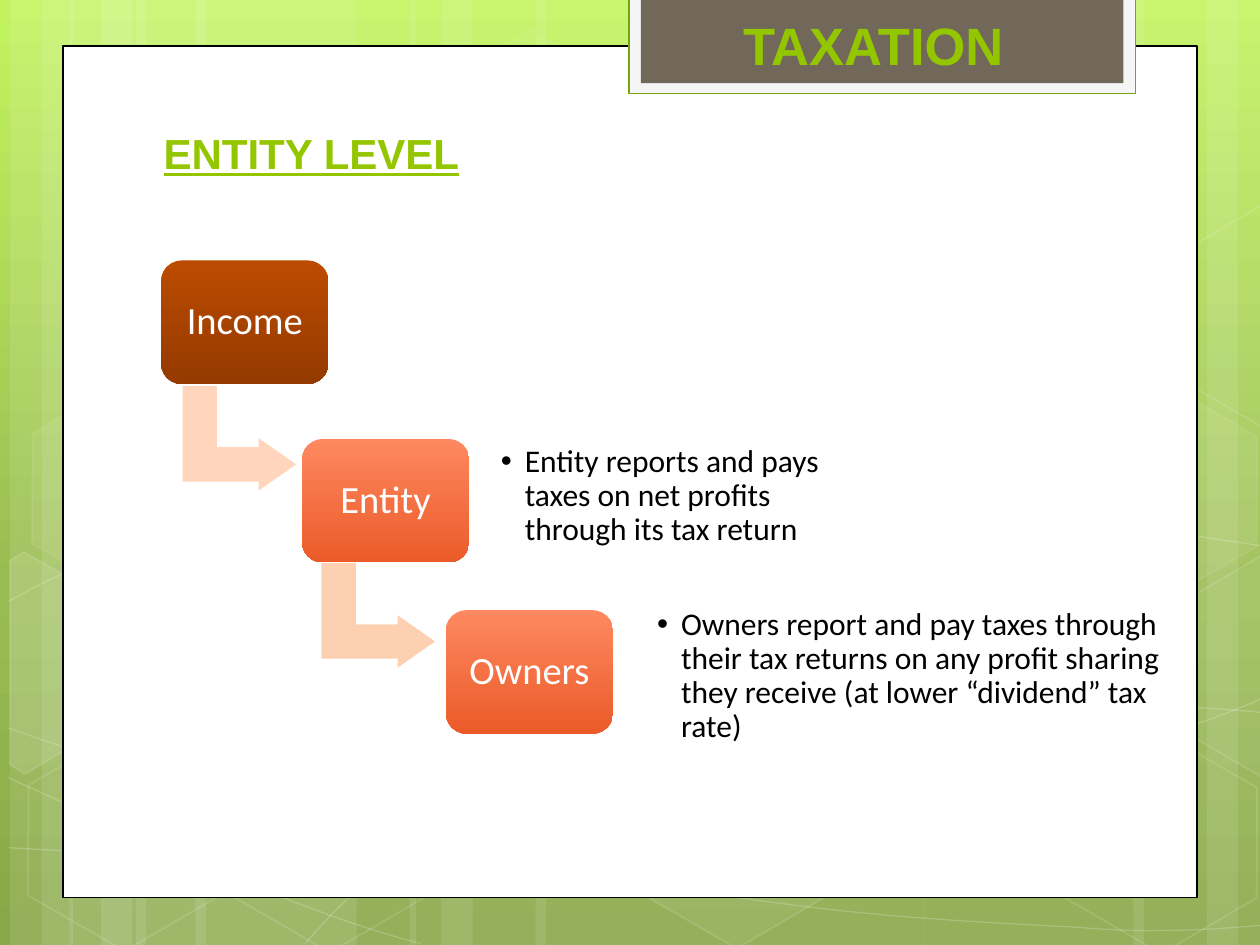
from copy import deepcopy
from math import cos, radians, sin

from lxml.etree import SubElement
from pptx import Presentation
from pptx.dml.color import RGBColor
from pptx.enum.shapes import MSO_SHAPE
from pptx.enum.text import MSO_ANCHOR, PP_ALIGN
from pptx.oxml.ns import qn
from pptx.util import Cm, Pt

WHITE = RGBColor(0xFF, 0xFF, 0xFF)
BLACK = RGBColor(0x00, 0x00, 0x00)
LIME = RGBColor(0x94, 0xC6, 0x00)
TAB_EDGE = RGBColor(0x74, 0xA5, 0x0F)
TAB_PALE = RGBColor(0xF5, 0xF5, 0xF5)
TAB_BROWN = RGBColor(0x71, 0x68, 0x5A)
PEACH = RGBColor(0xFF, 0xD6, 0xBB)
APRICOT = RGBColor(0xFE, 0xD0, 0xB2)
BACKDROP = [(0, RGBColor(0xC2, 0xF3, 0x5E)), (0.62, RGBColor(0x99, 0xBC, 0x52)),
            (1, RGBColor(0x88, 0xA8, 0x48))]
RUST = [(0, RGBColor(0xBB, 0x4B, 0x00)), (1, RGBColor(0x95, 0x3A, 0x00))]
ORANGE = [(0, RGBColor(0xFE, 0x88, 0x60)), (1, RGBColor(0xEB, 0x5B, 0x29))]

WIDTH, HEIGHT = 25.4, 19.05
TILT = 30
STRIPE_CLUSTERS = [(0.2, 1, 4.45), (1.4, 1, 4.45), (25.6, -1, 4.45), (8.26, 1, 7.82)]
CURVES = [
    [(0.18, 17.09), (1.55, 17.17), (2.92, 17.25), (4.83, 17.22), (6.73, 17.2),
     (9.09, 17.15), (11.63, 16.89), (14.17, 16.64), (17.78, 16.15), (20.12, 15.67),
     (22.43, 15.19), (24.82, 14.43), (25.58, 14)],
    [(0.18, 12.12), (0.91, 11.71), (1.65, 11.33), (3.07, 10.95), (4.52, 10.57),
     (6.58, 10.01), (8.81, 9.83), (11.07, 9.65), (13.82, 9.63), (16.61, 9.83),
     (19.41, 10.03), (24.05, 10.82), (25.58, 11.02)],
    [(0.15, 15.67), (3.23, 17.07), (6.27, 18.47), (8.48, 19.02)],
    [(0.18, 14.68), (0.97, 14.96), (1.78, 15.24), (3.25, 15.65), (4.72, 16.03),
     (6.93, 16.66), (9.07, 17.09), (11.18, 17.53), (13.84, 17.98), (15.95, 18.24),
     (18.06, 18.52), (20.32, 18.62), (21.67, 18.69), (22.99, 18.8), (23.34, 18.75),
     (24, 18.75), (24.66, 18.72), (25.12, 18.68), (25.58, 18.64)],
    [(6.15, 19.02), (6.6, 18.52), (7.06, 18.01), (7.67, 17.55), (8.28, 17.09),
     (9.14, 16.59), (9.86, 16.23), (10.57, 15.88), (11, 15.72), (11.94, 15.47),
     (12.85, 15.21), (14.55, 14.86), (15.44, 14.68), (16.36, 14.5), (16.48, 14.5),
     (17.27, 14.45), (18.06, 14.38), (19.3, 14.3), (20.17, 14.27), (21.06, 14.25),
     (22.5, 14.27), (22.5, 14.27), (23.07, 14.27), (23.64, 14.27), (24.21, 14.27),
     (24.66, 14.3), (25.1, 14.33), (25.32, 14.35), (25.55, 14.38), (25.48, 14.35),
     (25.55, 14.38)],
]
HEXAGONS = [(8.48, 0.91, 4, 8), (12.62, 14.96, 6, 12), (0.28, 15.01, 0, 12),
            (0.36, 7.92, 7, 8), (4.42, 15.04, 0, 12), (19.13, 11.51, 10, 12),
            (21.18, 15.06, 0, 12), (21.18, 7.98, 7, 8)]
LEFT_CUT = [(0.2, 11.3), (0.48, 11.13), (2.44, 12.24), (2.41, 14.48), (0.51, 15.6), (0.2, 15.42)]
RIGHT_CUT = [(23.52, 5.26), (25.43, 4.14), (25.64, 4.27), (25.63, 8.51), (25.45, 8.61), (23.52, 7.49)]
CUT_HEXAGONS = [(LEFT_CUT, 0, 10), (RIGHT_CUT, 7.06, 4), (RIGHT_CUT, 0, 0)]
PANELS = [((1.27, 0.93, 22.86, 17.17), WHITE, BLACK),
          ((12.68, -0.05, 10.21, 1.93), TAB_PALE, TAB_EDGE),
          ((12.92, -0.05, 9.73, 1.73), TAB_BROWN, None)]

HEADINGS = [
    ("TAXATION", (14.73, 0.25, 8.86, 1.42), 0.13, MSO_ANCHOR.BOTTOM,
     {"size": Pt(30), "name": "Arial", "bold": True}),
    ("ENTITY LEVEL", (3.05, 1.88, 8.33, 2.41), 0.25, MSO_ANCHOR.MIDDLE,
     {"size": Pt(24), "name": "Arial", "bold": True, "underline": True}),
]
STEPS = [
    {"name": "Income", "at": (3.25, 5.25), "fill": RUST, "arrow": ((3.77, 7.69), PEACH)},
    {"name": "Entity", "at": (6.09, 8.85), "fill": ORANGE, "arrow": ((6.57, 11.26), APRICOT),
     "note": ("Entity reports and pays taxes on net profits through its tax return",
              (9.92, 8, 7.34, 4.01))},
    {"name": "Owners", "at": (8.99, 12.3), "fill": ORANGE,
     "note": ("Owners report and pay taxes through their tax returns on any profit sharing "
              "they receive (at lower “dividend” tax rate)", (13.07, 10.87, 10.54, 5.54))},
]
STEP_SIZE = (3.37, 2.49)
ARROW_SIZE = (2.11, 2.29)
STEP_FONT = {"size": Pt(22), "name": "Calibri"}
NOTE_FONT = {"size": Pt(18), "name": "Calibri"}


def paint(shape, fill=None, line=None, fill_opacity=100, line_opacity=100, width=0.75):
    shape.shadow.inherit = False
    for target, color, opacity in ((shape.fill, fill, fill_opacity),
                                   (shape.line.fill, line, line_opacity)):
        if color is None or opacity == 0:
            target.background()
            continue
        target.solid()
        target.fore_color.rgb = color
        if opacity < 100:
            solid = target._xPr.find(qn("a:solidFill"))
            SubElement(solid[0], qn("a:alpha"), val=str(opacity * 1000))
    if line is not None:
        shape.line.width = Pt(width)


def paint_gradient(fill, stops):
    fill.gradient()
    fill.gradient_angle = 270
    stop_list = fill._xPr.find(qn("a:gradFill")).find(qn("a:gsLst"))
    while len(stop_list) < len(stops):
        stop_list.append(deepcopy(stop_list[0]))
    for stop, (position, color) in zip(fill.gradient_stops, stops):
        stop.position = position
        stop.color.rgb = color


def add_preset(slide, kind, frame, rotation=0, adjustments=()):
    shape = slide.shapes.add_shape(kind, *map(Cm, frame))
    shape.rotation = rotation
    for index, value in enumerate(adjustments):
        shape.adjustments[index] = value
    return shape


def add_outline(slide, points, close):
    scaled = [(Cm(x), Cm(y)) for x, y in points]
    builder = slide.shapes.build_freeform(*scaled[0])
    builder.add_line_segments(scaled[1:], close=close)
    return builder.convert_to_shape()


def add_curve(slide, points):
    shape = add_outline(slide, points, False)
    lines = list(shape._element.iter(qn("a:lnTo")))
    outline = lines[0].getparent()
    for start in range(0, len(lines), 3):
        curve = SubElement(outline, qn("a:cubicBezTo"))
        for line in lines[start:start + 3]:
            curve.append(line[0])
            outline.remove(line)
    return shape


def turn(point, degrees):
    x, y = point
    cosine, sine = cos(radians(degrees)), sin(radians(degrees))
    return x * cosine - y * sine, x * sine + y * cosine


def add_tilted_outline(slide, points):
    level = [turn(point, -TILT) for point in points]
    center = tuple((min(values) + max(values)) / 2 for values in zip(*level))
    shift_x, shift_y = (new - old for new, old in zip(turn(center, TILT), center))
    shape = add_outline(slide, [(x + shift_x, y + shift_y) for x, y in level], True)
    shape.rotation = TILT
    return shape


def write(box, text, font, color, margin, anchor=MSO_ANCHOR.MIDDLE, side=None, paragraph=None):
    frame = box.text_frame
    layout = {"word_wrap": True, "vertical_anchor": anchor,
              "margin_top": Cm(margin), "margin_bottom": Cm(margin),
              "margin_left": Cm(side or margin), "margin_right": Cm(side or margin)}
    para = frame.paragraphs[0]
    span = para.add_run()
    span.text = text
    span.font.color.rgb = color
    for target, values in ((frame, layout), (para, paragraph or {}), (span.font, font)):
        for name, value in values.items():
            setattr(target, name, value)
    return para


def add_note(slide, text, frame):
    box = slide.shapes.add_textbox(*map(Cm, frame))
    para = write(box, text, NOTE_FONT, BLACK, 0.18,
                 paragraph={"line_spacing": 0.9, "space_after": Pt(2.7)})
    properties = para._p.get_or_add_pPr()
    properties.set("marL", str(Cm(0.48)))
    properties.set("indent", str(-Cm(0.48)))
    SubElement(properties, qn("a:buFont"), typeface="Arial")
    SubElement(properties, qn("a:buChar"), char="•")


def add_backdrop(slide):
    paint_gradient(slide.background.fill, BACKDROP)
    for origin, direction, wide in STRIPE_CLUSTERS:
        for offset, width in ((2.54, wide), (0, 1.27), (0.64, 2.11)):
            left = origin + offset if direction > 0 else origin - offset - width
            stripe = add_preset(slide, MSO_SHAPE.RECTANGLE, (left, 0, width, HEIGHT))
            paint(stripe, WHITE, fill_opacity=10)
    for points in CURVES:
        paint(add_curve(slide, points), line=WHITE, line_opacity=20)
    for left, top, fill_opacity, line_opacity in HEXAGONS:
        hexagon = add_preset(slide, MSO_SHAPE.HEXAGON, (left, top, 4.45, 3.86), TILT, (0.285, 1.155))
        paint(hexagon, WHITE, WHITE, fill_opacity, line_opacity, 1)
    for points, drop, opacity in CUT_HEXAGONS:
        outline = add_tilted_outline(slide, [(x, y + drop) for x, y in points])
        paint(outline, WHITE, WHITE, opacity, 12, 1)
    for frame, fill, line in PANELS:
        paint(add_preset(slide, MSO_SHAPE.RECTANGLE, frame), fill, line)


def add_step(slide, step):
    if "arrow" in step:
        position, color = step["arrow"]
        paint(add_preset(slide, MSO_SHAPE.BENT_UP_ARROW, position + ARROW_SIZE, 90,
                         (0.328, 0.25, 0.358)), color)
    box = add_preset(slide, MSO_SHAPE.ROUNDED_RECTANGLE, step["at"] + STEP_SIZE, 0, (0.167,))
    paint(box)
    paint_gradient(box.fill, step["fill"])
    write(box, step["name"], STEP_FONT, WHITE, 0.2,
          paragraph={"alignment": PP_ALIGN.CENTER, "line_spacing": 0.9, "space_after": Pt(7.7)})
    if "note" in step:
        add_note(slide, *step["note"])


def main():
    deck = Presentation()
    deck.slide_width, deck.slide_height = Cm(WIDTH), Cm(HEIGHT)
    page = deck.slides.add_slide(deck.slide_layouts[6])
    add_backdrop(page)
    for step in STEPS:
        add_step(page, step)
    for text, frame, margin, anchor, font in HEADINGS:
        box = page.shapes.add_textbox(*map(Cm, frame))
        write(box, text, font, LIME, margin, anchor, side=0.25)
    deck.save("out.pptx")


if __name__ == "__main__":
    main()
